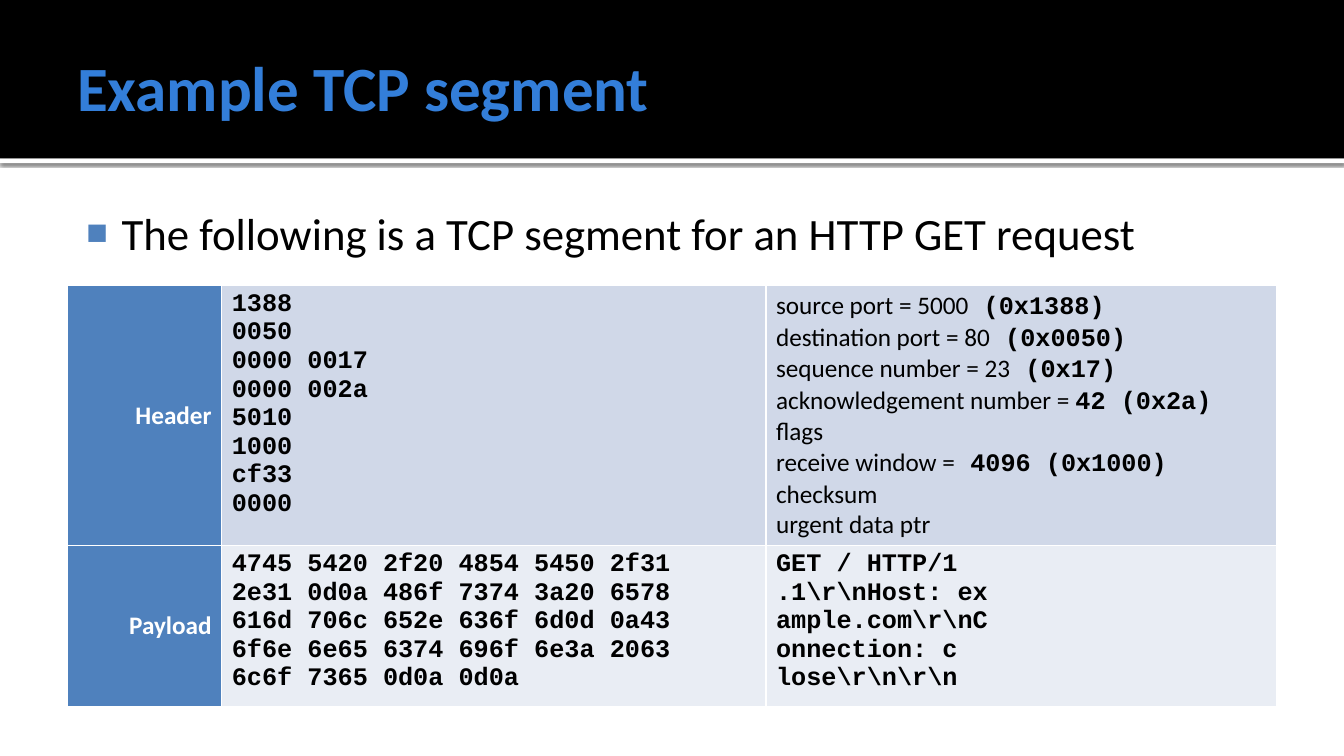
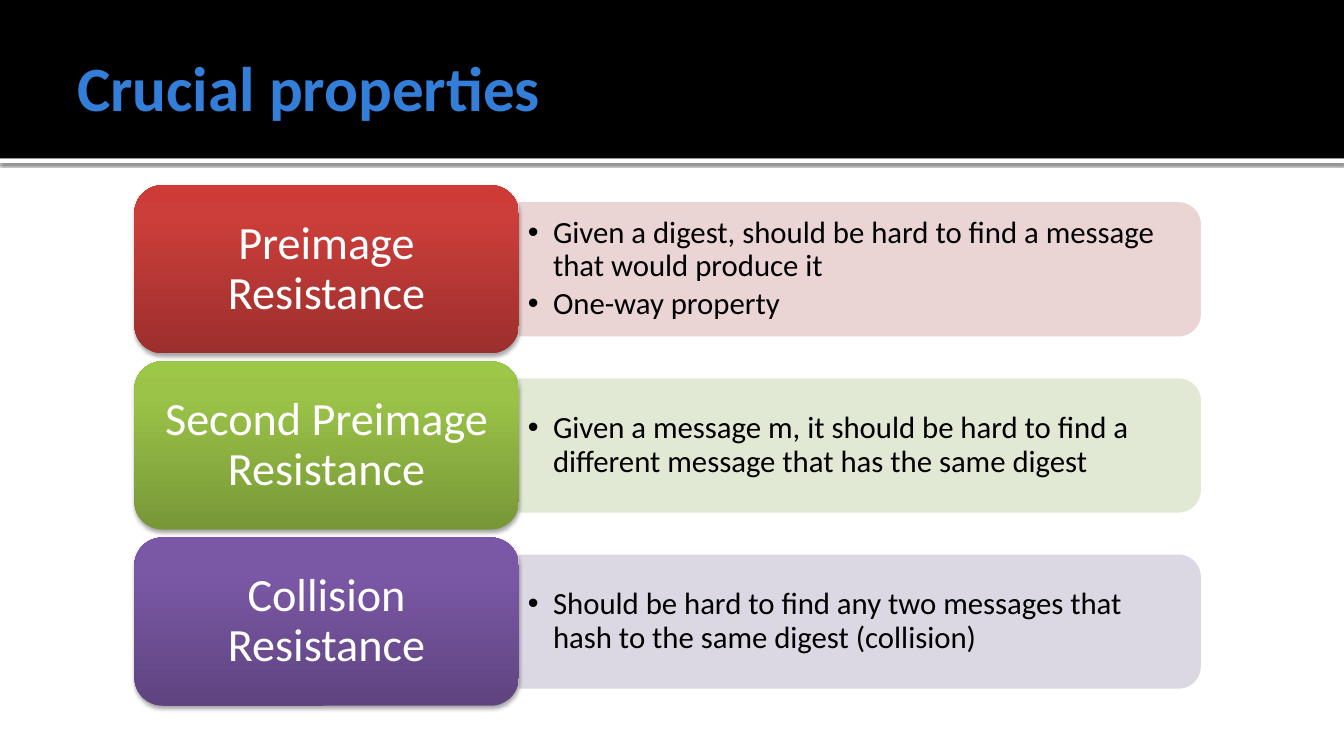
from dataclasses import dataclass

from lxml.etree import SubElement
from pptx import Presentation
from pptx.dml.color import RGBColor
from pptx.enum.shapes import MSO_SHAPE as Shape
from pptx.enum.text import MSO_ANCHOR as Anchor, PP_ALIGN as Align
from pptx.oxml.ns import qn
from pptx.util import Emu, Inches, Pt


@dataclass(frozen=True)
class Theme:
    width: float = 13.333
    height: float = 7.5
    sans: str = "Calibri"
    mono: str = "Courier New"
    # Colours
    black: str = "000000"
    white: str = "FFFFFF"
    title: str = "337ED9"
    accent: str = "4F81BD"
    bands: tuple = ("D0D8E8", "E9EDF4")
    # Type sizes
    title_size: int = 45
    body_size: int = 32
    head_size: int = 33
    point_size: int = 22
    cell_size: int = 18


THEME = Theme()
GRID = 20  # columns and rows on each slide


def cols(count):
    return Inches(THEME.width * count / GRID)


def rows(count):
    return Inches(THEME.height * count / GRID)


def area(left, top, width, height):
    return cols(left), rows(top), cols(width), rows(height)


# XML helpers
def child(parent, tag, **attributes):
    return SubElement(parent, qn(tag), {k: str(v) for k, v in attributes.items()})


def add_color(parent, color, opacity=100):
    rgb = child(parent, "a:srgbClr", val=color)
    if opacity < 100:
        child(rgb, "a:alpha", val=opacity * 1000)


def add_bullet(paragraph, char, margin, hang, color=None, percent=100):
    props = paragraph._p.get_or_add_pPr()
    props.set("marL", str(Inches(margin)))
    props.set("indent", str(-Inches(hang)))
    if color:
        add_color(child(props, "a:buClr"), color)
    child(props, "a:buSzPct", val=percent * 1000)
    child(props, "a:buFont", typeface="Arial")
    child(props, "a:buChar", char=char)


def add_shadow(shape, opacity, blur, distance):
    effects = shape._element.spPr.find(qn("a:effectLst"))
    shadow = child(effects, "a:outerShdw", blurRad=Pt(blur), dist=Pt(distance),
                   dir=90 * 60000, rotWithShape=0)
    add_color(shadow, THEME.black, opacity)


def add_gradient(shape, stops):
    shape.fill.gradient()
    shape.fill.gradient_angle = 90
    stop_list = shape._element.spPr.find(".//" + qn("a:gsLst"))
    for stop in list(stop_list):
        stop_list.remove(stop)
    for position, color in stops:
        add_color(child(stop_list, "a:gs", pos=position * 1000), color)


def add_borders(cell, color, width):
    props = cell._tc.get_or_add_tcPr()
    for index, side in enumerate(("a:lnL", "a:lnR", "a:lnT", "a:lnB")):
        line = child(props, side, w=Pt(width))
        add_color(child(line, "a:solidFill"), color)
        props.insert(index, line)


# Text
def write(frame, lines, size, color=THEME.black, bold=False, mono=False,
          align=Align.LEFT, anchor=Anchor.TOP, insets=None, spacing=None,
          gap=0, bullet=None):
    """Write one paragraph a line; a (plain, code) pair ends in bold code."""
    frame.word_wrap = True
    frame.vertical_anchor = anchor
    if insets:
        (frame.margin_left, frame.margin_top,
         frame.margin_right, frame.margin_bottom) = map(Inches, insets)
    for index, line in enumerate(lines):
        paragraph = frame.add_paragraph() if index else frame.paragraphs[0]
        if bullet:
            add_bullet(paragraph, **bullet)
        paragraph.alignment = align
        if spacing:
            paragraph.line_spacing = spacing
        if index and gap:
            paragraph.space_before = Pt(gap)
        plain, code = line if isinstance(line, tuple) else (line, "")
        for text, is_code in ((plain, mono), (code, True)):
            if text:
                run = paragraph.add_run()
                run.text = text
                run.font.name = THEME.mono if is_code else THEME.sans
                run.font.size = Pt(size)
                run.font.bold = bold or is_code
                run.font.color.rgb = RGBColor.from_string(color)


def add_text(slide, place, lines, **style):
    write(slide.shapes.add_textbox(*place).text_frame, lines, **style)


# Shapes
def add_block(slide, kind, place, color=None):
    block = slide.shapes.add_shape(kind, *place)
    block.shadow.inherit = False
    block.line.fill.background()
    if color:
        block.fill.solid()
        block.fill.fore_color.rgb = RGBColor.from_string(color)
    return block


def add_titled_slide(deck, title):
    slide = deck.slides.add_slide(deck.slide_layouts[6])
    strip = add_block(slide, Shape.RECTANGLE, area(0, 4.19, GRID, 0.13), THEME.white)
    add_shadow(strip, opacity=60, blur=2.5, distance=0.8)
    add_block(slide, Shape.RECTANGLE, area(0, 0, GRID, 4.19), THEME.black)
    add_text(slide, area(1, 0.45, 18, 3.65), [title], size=THEME.title_size,
             color=THEME.title, bold=True, anchor=Anchor.MIDDLE,
             insets=(0.1, 0.05, 0.05, 0.05))
    return slide


# Segment table
def add_segment_table(slide, sections, left, top, widths, heights):
    place = area(left, top, sum(widths), sum(heights))
    table = slide.shapes.add_table(len(sections), len(widths), *place).table
    table.first_row = table.horz_banding = False
    for column, width in zip(table.columns, widths):
        column.width = cols(width)
    for row, height in zip(table.rows, heights):
        row.height = rows(height)
    label_style = dict(color=THEME.white, bold=True, align=Align.RIGHT,
                       anchor=Anchor.MIDDLE)
    code_style = dict(bold=True, mono=True)
    for row, (label, data, meaning, meaning_is_code) in enumerate(sections):
        band = THEME.bands[row]
        parts = (
            ([label], THEME.accent, label_style),
            (data, band, code_style),
            (meaning, band, code_style if meaning_is_code else {}),
        )
        for column, (lines, color, style) in enumerate(parts):
            cell = table.cell(row, column)
            cell.fill.solid()
            cell.fill.fore_color.rgb = RGBColor.from_string(color)
            add_borders(cell, THEME.white, 1)
            # The cell itself carries the anchor
            style = dict(style)
            cell.vertical_anchor = style.pop("anchor", Anchor.TOP)
            write_cell(cell, lines, **style)


def write_cell(cell, lines, **style):
    anchor = cell.vertical_anchor
    write(cell.text_frame, lines, size=THEME.cell_size, **style)
    cell.vertical_anchor = anchor


# Property rows
def add_property(slide, top, name, points, tint, stops):
    left, head_width, bar_width = 2, 5.72, 10.15
    head_height, bar_height, text_height = 4.45, 3.55, 3.2
    middle = top + head_height / 2
    bar_left = left + head_width

    # Bar: a shape with two round corners, turned to the right
    x, y, length, depth = area(bar_left, middle - bar_height / 2, bar_width, bar_height)
    shift = (length - depth) // 2
    bar = add_block(slide, Shape.ROUND_2_SAME_RECTANGLE,
                    (Emu(x + shift), Emu(y - shift), depth, length), tint)
    bar.rotation = 90
    tint_color = bar._element.spPr.find(qn("a:solidFill")).find(qn("a:srgbClr"))
    child(tint_color, "a:alpha", val=90000)
    add_text(slide, area(bar_left, middle - text_height / 2, 10.07, text_height), points,
             size=THEME.point_size, anchor=Anchor.MIDDLE, spacing=0.9, gap=3.3,
             insets=(0.09, 0.05, 0.09, 0.05),
             bullet=dict(char="•", margin=0.25, hang=0.25))

    # Head
    head = add_block(slide, Shape.ROUNDED_RECTANGLE,
                     area(left, top, head_width, head_height))
    add_gradient(head, stops)
    add_shadow(head, opacity=35, blur=3.1, distance=1.8)
    write(head.text_frame, [name], size=THEME.head_size, color=THEME.white,
          align=Align.CENTER, anchor=Anchor.MIDDLE, spacing=0.9,
          insets=(0.22, 0.15, 0.22, 0.15))


# Slides
def build_segment(deck):
    slide = add_titled_slide(deck, "Example TCP segment")
    add_text(slide, area(1, 5.17, 18, 2.83),
             ["The following is a TCP segment for an HTTP GET request"],
             size=THEME.body_size, insets=(0.06, 0.1, 0.1, 0.05),
             bullet=dict(char="■", margin=0.48, hang=0.35,
                         color=THEME.accent, percent=80))
    header_data = ["1388", "0050", "0000 0017", "0000 002a",
                   "5010", "1000", "cf33", "0000"]
    header_fields = [
        ("source port = 5000", " (0x1388)"),
        ("destination port = 80", " (0x0050)"),
        ("sequence number = 23", " (0x17)"),
        ("acknowledgement number = ", "42 (0x2a)"),
        "flags",
        ("receive window =", " 4096 (0x1000)"),
        "checksum",
        "urgent data ptr",
    ]
    payload_data = [
        "4745 5420 2f20 4854 5450 2f31",
        "2e31 0d0a 486f 7374 3a20 6578",
        "616d 706c 652e 636f 6d0d 0a43",
        "6f6e 6e65 6374 696f 6e3a 2063",
        "6c6f 7365 0d0a 0d0a",
    ]
    payload_text = [r"GET / HTTP/1", r".1\r\nHost: ex", r"ample.com\r\nC",
                    r"onnection: c", r"lose\r\n\r\n"]
    add_segment_table(
        slide,
        [("Header", header_data, header_fields, False),
         ("Payload", payload_data, payload_text, True)],
        left=1, top=7.55, widths=(2.3, 8.1, 7.6), heights=(6.88, 4.05))


def build_properties(deck):
    slide = add_titled_slide(deck, "Crucial properties")
    properties = [
        ("Preimage Resistance",
         ["Given a digest, should be hard to find a message that would produce it",
          "One-way property"],
         "E8D0D0", ("9C2F2D", "CB3E3A", "CE3B37")),
        ("Second Preimage Resistance",
         ["Given a message m, it should be hard to find a different message "
          "that has the same digest"],
         "DEE7D1", ("779737", "9BC348", "9DC746")),
        ("Collision Resistance",
         ["Should be hard to find any two messages that hash to the same "
          "digest (collision)"],
         "D8D3E0", ("5F4480", "7B58A6", "7C57A8")),
    ]
    first_top, pitch = 4.9, 4.66
    for index, (name, points, tint, shades) in enumerate(properties):
        add_property(slide, first_top + index * pitch, name, points, tint,
                     zip((0, 80, 100), shades))


def main():
    deck = Presentation()
    deck.slide_width, deck.slide_height = cols(GRID), rows(GRID)
    build_segment(deck)
    build_properties(deck)
    deck.save("out.pptx")


if __name__ == "__main__":
    main()
